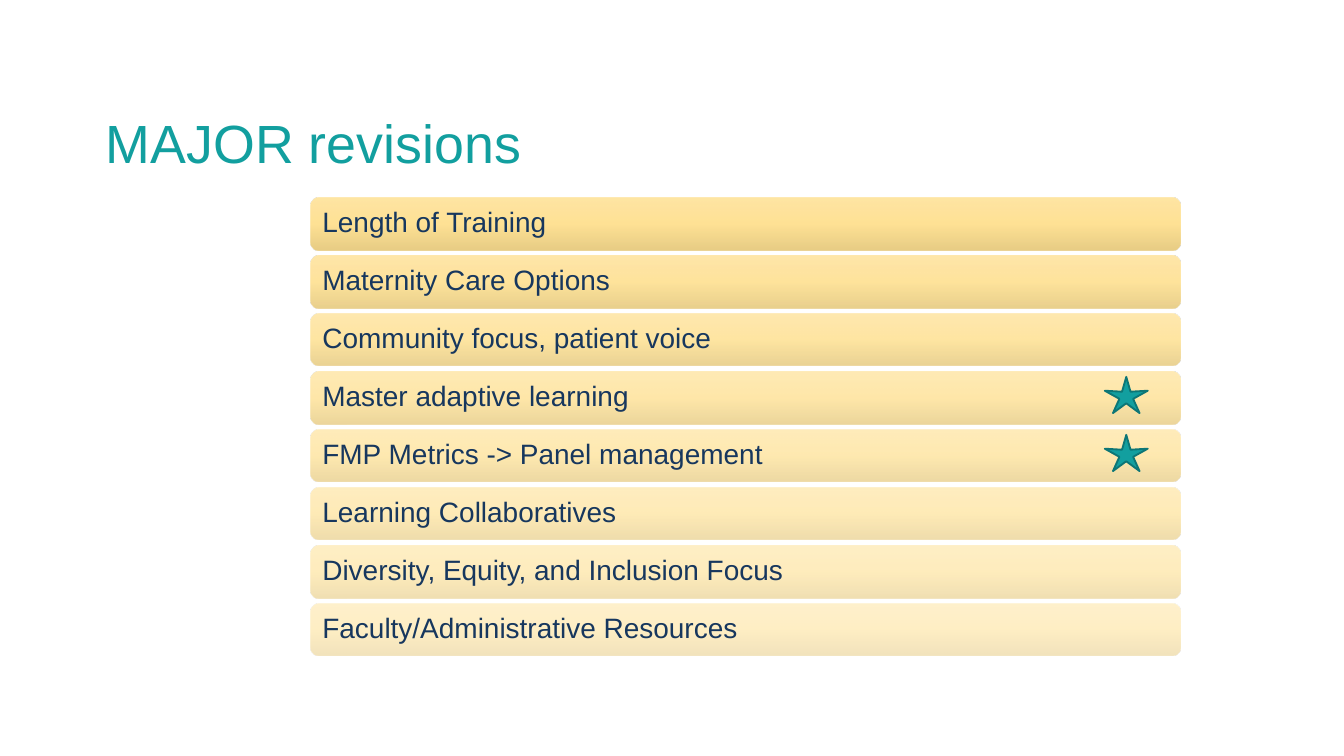
from dataclasses import dataclass

from lxml.etree import SubElement
from pptx import Presentation
from pptx.dml.color import RGBColor
from pptx.enum.shapes import MSO_SHAPE as Shape
from pptx.enum.text import MSO_ANCHOR as Anchor, PP_ALIGN as Align
from pptx.oxml.ns import qn
from pptx.slide import Slide
from pptx.util import Inches, Pt

COLORS = {
    "teal": "129F9F",
    "title_outline": "0A9D9D",
    "star_line": "0D7676",
    "navy": "17375E",
    "bar_top": "FFE39B",
    "bar_middle": "FFDF8A",
    "bar_bottom": "E5C778",
}
BAR_STOPS = [(0, "bar_top"), (50, "bar_middle"), (100, "bar_bottom")]
FONT = "Arial"
FIRST_TOP, LAST_TOP = 1.47, 4.49
FIRST_OPACITY, LAST_OPACITY = 90, 50


@dataclass
class Revision:
    text: str
    starred: bool = False


REVISIONS = [
    Revision("Length of Training"),
    Revision("Maternity Care Options"),
    Revision("Community focus, patient voice"),
    Revision("Master adaptive learning", starred=True),
    Revision("FMP Metrics -> Panel management", starred=True),
    Revision("Learning Collaboratives"),
    Revision("Diversity, Equity, and Inclusion Focus"),
    Revision("Faculty/Administrative Resources"),
]


def rgb(name: str) -> RGBColor:
    return RGBColor.from_string(COLORS[name])


def add_run(p, text: str, size: float, color: str):
    r = p.add_run()
    r.text = text
    r.font.name = FONT
    r.font.size = Pt(size)
    r.font.color.rgb = rgb(color)
    return r


def outline_run(r, color: str, width: float) -> None:
    props = r._r.get_or_add_rPr()
    ln = props.makeelement(qn("a:ln"), {"w": str(Pt(width))})
    fill = SubElement(ln, qn("a:solidFill"))
    SubElement(fill, qn("a:srgbClr"), val=COLORS[color])
    props.insert(0, ln)


def fill_bar(sp, opacity: float) -> None:
    """Apply the vertical gradient with the same opacity at every stop."""
    sp.fill.gradient()
    sp.fill.gradient_angle = 270
    stops = sp.element.spPr.find(qn("a:gradFill")).find(qn("a:gsLst"))
    stops.clear()
    for position, color in BAR_STOPS:
        stop = SubElement(stops, qn("a:gs"), pos=str(position * 1000))
        clr = SubElement(stop, qn("a:srgbClr"), val=COLORS[color])
        SubElement(clr, qn("a:alpha"), val=str(round(opacity * 1000)))


def add_title(s: Slide) -> None:
    box = s.shapes.add_textbox(Inches(0.69), Inches(0.8), Inches(8.62), Inches(0.57))
    tf = box.text_frame
    tf.word_wrap = True
    tf.vertical_anchor = Anchor.MIDDLE
    p = tf.paragraphs[0]
    p.line_spacing = 0.9
    outline_run(add_run(p, "MAJOR", 28.8, "teal"), "title_outline", 0.83)
    add_run(p, " revisions", 28.8, "teal")


def add_bar(s: Slide, text: str, top: float, opacity: float) -> None:
    sp = s.shapes.add_shape(
        Shape.ROUNDED_RECTANGLE, Inches(2.31), Inches(top), Inches(6.47), Inches(0.39)
    )
    sp.shadow.inherit = False
    sp.line.fill.background()
    fill_bar(sp, opacity)
    tf = sp.text_frame
    tf.word_wrap = True
    tf.vertical_anchor = Anchor.MIDDLE
    tf.margin_left = tf.margin_right = Inches(0.07)
    tf.margin_top = tf.margin_bottom = Inches(0.06)
    p = tf.paragraphs[0]
    p.alignment = Align.LEFT
    p.line_spacing = 0.9
    add_run(p, text, 15, "navy")


def add_star(s: Slide, top: float) -> None:
    sp = s.shapes.add_shape(
        Shape.STAR_5_POINT, Inches(8.22), Inches(top), Inches(0.32), Inches(0.27)
    )
    sp.adjustments[0] = 0.16
    sp.shadow.inherit = False
    sp.fill.solid()
    sp.fill.fore_color.rgb = rgb("teal")
    sp.line.color.rgb = rgb("star_line")
    sp.line.width = Pt(1)


def main() -> None:
    prs = Presentation()
    prs.slide_width = Inches(10)
    prs.slide_height = prs.slide_width * 9 // 16
    s = prs.slides.add_slide(prs.slide_layouts[6])
    add_title(s)
    for i, revision in enumerate(REVISIONS):
        share = i / (len(REVISIONS) - 1)
        top = FIRST_TOP + share * (LAST_TOP - FIRST_TOP)
        opacity = FIRST_OPACITY + share * (LAST_OPACITY - FIRST_OPACITY)
        add_bar(s, revision.text, top, opacity)
        if revision.starred:
            add_star(s, top + 0.04)
    prs.save("out.pptx")


if __name__ == "__main__":
    main()
